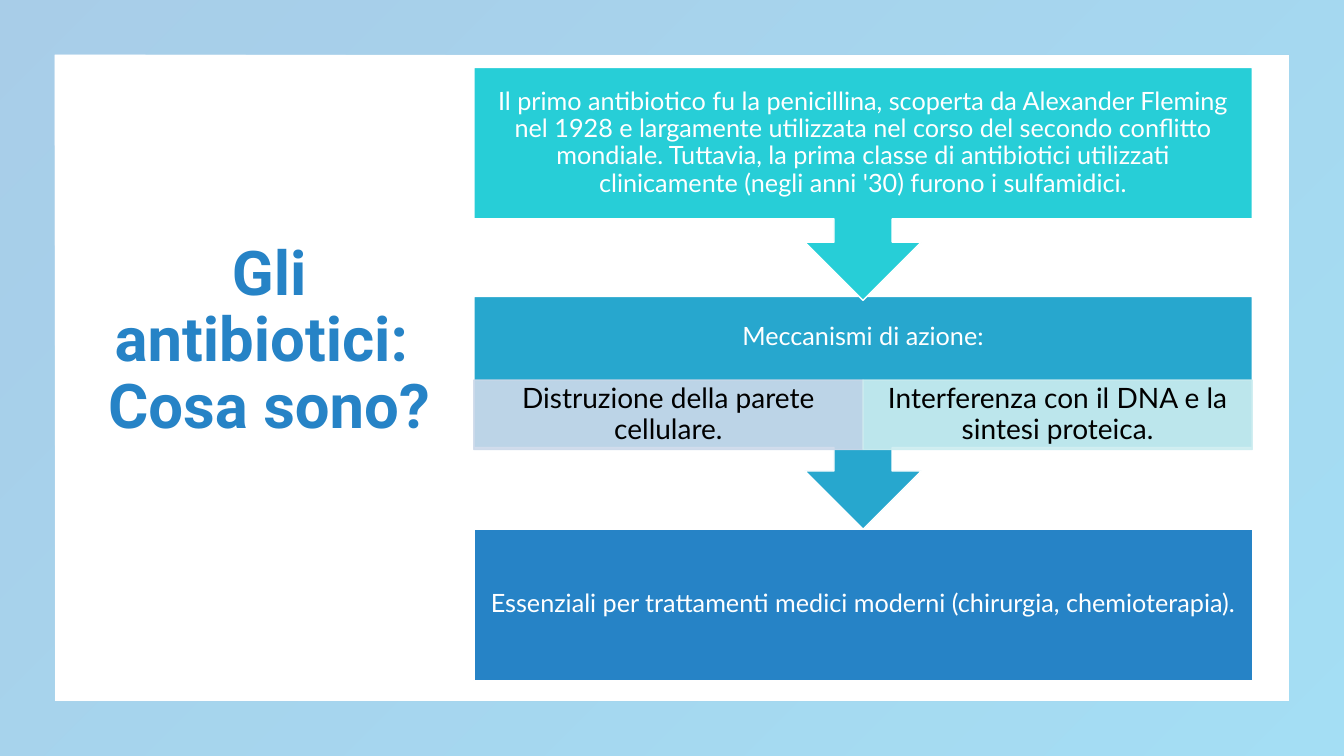
"""Build the slide that explains what antibiotics are."""
import pptx
import pptx.util
import pptx.dml.color
import pptx.enum.shapes
import pptx.enum.text
import pptx.oxml
import pptx.oxml.ns
from lxml import etree

Inches, Pt = pptx.util.Inches, pptx.util.Pt
RGB = pptx.dml.color.RGBColor.from_string
SHAPE = pptx.enum.shapes.MSO_SHAPE

TITLE = "Gli antibiotici: \vCosa sono?"
DISCOVERY = (
    "Il primo antibiotico fu la penicillina, scoperta da Alexander Fleming nel 1928 "
    "e largamente utilizzata nel corso del secondo conflitto mondiale. Tuttavia, la "
    "prima classe di antibiotici utilizzati clinicamente (negli anni '30) furono i "
    "sulfamidici."
)
MECHANISMS = "Meccanismi di azione:"
ACTIONS = [
    ("Distruzione della parete cellulare.", "CDD9EA"),
    ("Interferenza con il DNA e la sintesi proteica.", "CDEDF0"),
]
USES = "Essenziali per trattamenti medici moderni (chirurgia, chemioterapia)."

THEME = {
    "blue": "2683C6", "sky": "1CADE4", "teal": "27A7CE", "cyan": "27CED7",
    "white": "FFFFFF", "black": "000000",
    "title": 44, "step": 18, "action": 20,
    "heading_font": "Roboto", "body_font": "Lato",
}
SLIDE_W, SLIDE_H = 13.33, 7.5
FLOW_X, FLOW_W = 4.7, 7.72
STEP_TOPS = (0.67, 2.94, 5.25)
STEP_H, CALLOUT_H = 1.5, 2.31
ACTION_Y, ACTION_H = 3.77, 0.69
STEP_INSETS = (0.14, 0.14, 0.14, 0.14)


def set_alpha(s, percent):
    """Give every colour of the shape's fill and line the same opacity."""
    for color in s._element.spPr.iter(pptx.oxml.ns.qn("a:srgbClr")):
        etree.SubElement(color, pptx.oxml.ns.qn("a:alpha"), val=str(percent * 1000))


def write(s, text, insets, font):
    """Write one centred paragraph in the shape."""
    tf = s.text_frame
    tf.text = text
    tf.word_wrap = True
    tf.auto_size = pptx.enum.text.MSO_AUTO_SIZE.NONE
    tf.vertical_anchor = pptx.enum.text.MSO_ANCHOR.MIDDLE
    for side, inset in zip(("left", "top", "right", "bottom"), insets):
        setattr(tf, f"margin_{side}", Inches(inset))
    p = tf.paragraphs[0]
    p.alignment = pptx.enum.text.PP_ALIGN.CENTER
    p.line_spacing = 0.9
    for r in p.runs:
        for name, value in font.items():
            if name == "color":
                r.font.color.rgb = RGB(value)
            else:
                setattr(r.font, name, value)


def add_box(slide, kind, box, color, text, insets, font, line=None):
    """Add a filled and outlined shape with its text."""
    s = slide.shapes.add_shape(kind, *map(Inches, box))
    s.shadow.inherit = False
    s.fill.solid()
    s.fill.fore_color.rgb = RGB(color)
    s.line.color.rgb = RGB(line or THEME["white"])
    s.line.width = Pt(1)
    write(s, text, insets, font)
    return s


def add_border(slide):
    """Add the gradient frame around the slide."""
    s = slide.shapes.add_shape(SHAPE.FRAME, 0, 0, Inches(SLIDE_W), Inches(SLIDE_H))
    s.adjustments[0] = 0.072
    s.shadow.inherit = False
    s.line.fill.background()
    s.fill.gradient()
    s.fill.gradient_angle = 315
    for stop, position, name in zip(s.fill.gradient_stops, (0, 1), ("blue", "sky")):
        stop.position = position
        stop.color.rgb = RGB(THEME[name])
    set_alpha(s, 40)


def add_title(slide):
    """Place and format the title placeholder."""
    s = slide.shapes.title
    s.left, s.top, s.width, s.height = map(Inches, (0.92, 0.67, 3.5, 6.09))
    write(s, TITLE, (0.1, 0.05, 0.1, 0.7), {
        "name": THEME["heading_font"], "size": Pt(THEME["title"]),
        "color": THEME["blue"], "bold": True,
    })


def add_flow(slide):
    """Add the three steps and the two actions inside the middle one."""
    step_font = {"name": THEME["body_font"], "size": Pt(THEME["step"]),
                 "color": THEME["white"]}
    action_font = {"name": THEME["body_font"], "size": Pt(THEME["action"]),
                   "color": THEME["black"]}
    above_actions = (0.14, 0.14, 0.14, 0.14 + ACTION_H)
    steps = [
        (SHAPE.DOWN_ARROW_CALLOUT, CALLOUT_H, "cyan", DISCOVERY, STEP_INSETS),
        (SHAPE.DOWN_ARROW_CALLOUT, CALLOUT_H, "teal", MECHANISMS, above_actions),
        (SHAPE.RECTANGLE, STEP_H, "blue", USES, STEP_INSETS),
    ]
    for top, (kind, height, color, text, insets) in reversed(list(zip(STEP_TOPS, steps))):
        add_box(slide, kind, (FLOW_X, top, FLOW_W, height), THEME[color],
                text, insets, step_font)
    width = FLOW_W / len(ACTIONS)
    for i, (text, color) in enumerate(ACTIONS):
        s = add_box(slide, SHAPE.RECTANGLE,
                    (FLOW_X + i * width, ACTION_Y, width, ACTION_H), color,
                    text, (0.16, 0.03, 0.16, 0.03), action_font, color)
        set_alpha(s, 90)


def main():
    """Create the presentation and save it."""
    prs = pptx.Presentation()
    prs.slide_width, prs.slide_height = Inches(SLIDE_W), Inches(SLIDE_H)
    slide = prs.slides.add_slide(prs.slide_layouts.get_by_name("Title Only"))
    slide.background.fill.solid()
    slide.background.fill.fore_color.rgb = RGB(THEME["white"])
    add_border(slide)
    add_title(slide)
    add_flow(slide)
    prs.save("out.pptx")


if __name__ == "__main__":
    main()
